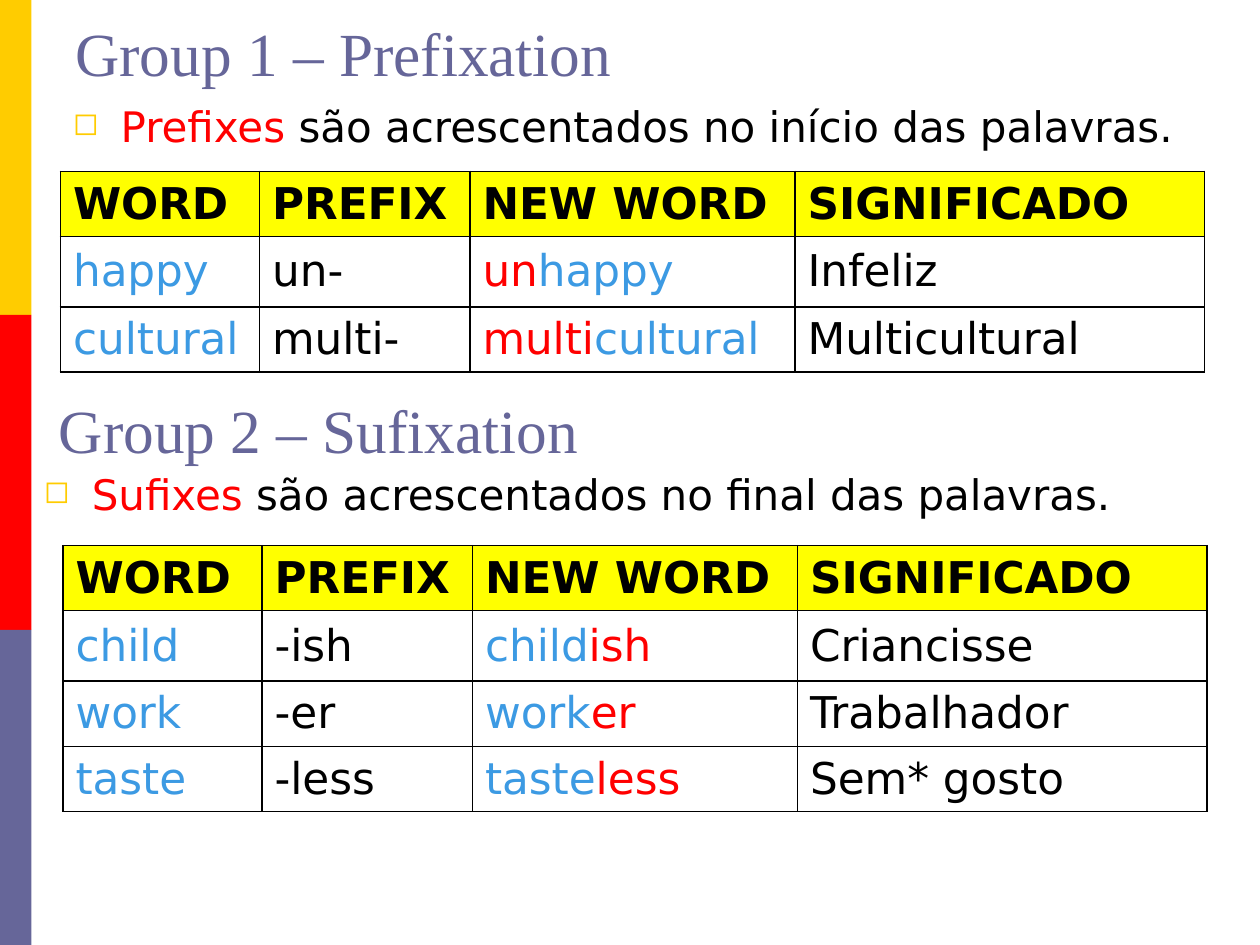
from lxml import etree
from pptx import Presentation
from pptx.dml.color import RGBColor
from pptx.enum.shapes import MSO_SHAPE
from pptx.enum.text import MSO_ANCHOR
from pptx.oxml import parse_xml
from pptx.oxml.ns import nsdecls
from pptx.util import Inches, Pt

RECTANGLE = MSO_SHAPE.RECTANGLE
TOP, MIDDLE, BOTTOM = MSO_ANCHOR.TOP, MSO_ANCHOR.MIDDLE, MSO_ANCHOR.BOTTOM

BLACK, WHITE, RED, YELLOW = "000000", "FFFFFF", "FF0000", "FFFF00"
GOLD, SLATE, BLUE = "FFCC00", "666699", "3C9AE3"

HEADING_FORMAT = {"name": "Times New Roman", "size": Pt(35)}
RULE_FORMAT = {"name": "DejaVu Sans", "size": Pt(24)}
CELL_FORMAT = {"name": "DejaVu Sans", "size": Pt(25), "bold": False}
HEADER_FORMAT = {**CELL_FORMAT, "bold": True}

SIDE_BANDS = [GOLD, RED, SLATE]
HEADERS = ["WORD", "PREFIX", "NEW WORD", "SIGNIFICADO"]
COLUMN_WIDTHS = [1.58, 1.67, 2.58, 3.25]
ROW_HEIGHT, FIRST_WORD_HEIGHT = 0.51, 0.56

# Boxes are left, top, width, height in inches; words are stem, affix, meaning.
GROUPS = [
    {
        "heading": "Group 1 – Prefixation",
        "heading_box": (0.5, 0, 9, 0.75),
        "rule": [("Prefixes ", RED), ("são acrescentados no início das palavras.", BLACK)],
        "rule_box": (0.48, 0.75, 9.33, 0.67),
        "table_corner": (0.48, 1.36),
        "words": [("happy", "un-", "Infeliz"), ("cultural", "multi-", "Multicultural")],
    },
    {
        "heading": "Group 2 – Sufixation",
        "heading_box": (0.37, 3.08, 9, 0.67),
        "rule": [("Sufixes ", RED), ("são acrescentados no final das palavras.", BLACK)],
        "rule_box": (0.25, 3.67, 8.92, 0.75),
        "table_corner": (0.5, 4.33),
        "words": [
            ("child", "-ish", "Criancisse"),
            ("work", "-er", "Trabalhador"),
            ("taste", "-less", "Sem* gosto"),
        ],
    },
]


def color(hex_string):
    return RGBColor.from_string(hex_string)


def write_runs(paragraph, runs, font_format):
    for text, run_color in runs:
        run = paragraph.add_run()
        run.text = text
        run.font.color.rgb = color(run_color)
        for attribute, value in font_format.items():
            setattr(run.font, attribute, value)


def add_text(slide, box, runs, font_format, anchor):
    frame = slide.shapes.add_textbox(*map(Inches, box)).text_frame
    frame.word_wrap = True
    frame.vertical_anchor = anchor
    paragraph = frame.paragraphs[0]
    write_runs(paragraph, runs, font_format)
    return paragraph


def add_bullet(paragraph):
    properties = paragraph._p.get_or_add_pPr()
    properties.set("marL", str(Inches(0.38)))
    properties.set("indent", str(-Inches(0.38)))
    for xml in (
        f'<a:spcBef {nsdecls("a")}><a:spcPct val="20000"/></a:spcBef>',
        f'<a:buClr {nsdecls("a")}><a:srgbClr val="{GOLD}"/></a:buClr>',
        f'<a:buSzPct {nsdecls("a")} val="75000"/>',
        f'<a:buChar {nsdecls("a")} char="◻"/>',
    ):
        properties.append(etree.fromstring(xml))


def add_borders(cell):
    properties = cell._tc.get_or_add_tcPr()
    for position, side in enumerate("LRTB"):
        properties.insert(position, parse_xml(
            f'<a:ln{side} {nsdecls("a")} w="{Pt(1)}"><a:solidFill>'
            f'<a:srgbClr val="{BLACK}"/></a:solidFill></a:ln{side}>'))


def word_row(stem, affix, meaning):
    """Runs of each cell, with the affix joined on the side its hyphen points to."""
    new_word = [(stem, BLUE), (affix.strip("-"), RED)]
    if affix.endswith("-"):
        new_word.reverse()
    return [[(stem, BLUE)], [(affix, BLACK)], new_word, [(meaning, BLACK)]]


def add_word_table(slide, corner, words):
    rows = [[[(header, BLACK)] for header in HEADERS]]
    rows += [word_row(*word) for word in words]
    heights = [ROW_HEIGHT, FIRST_WORD_HEIGHT] + [ROW_HEIGHT] * (len(words) - 1)
    size = sum(COLUMN_WIDTHS), sum(heights)
    table = slide.shapes.add_table(
        len(rows), len(HEADERS), *map(Inches, corner + size)).table
    for column, width in zip(table.columns, COLUMN_WIDTHS):
        column.width = Inches(width)
    for row, height in zip(table.rows, heights):
        row.height = Inches(height)
    for r, row in enumerate(rows):
        for c, runs in enumerate(row):
            cell = table.cell(r, c)
            cell.vertical_anchor = MIDDLE
            cell.fill.solid()
            cell.fill.fore_color.rgb = color(WHITE if r else YELLOW)
            add_borders(cell)
            write_runs(cell.text_frame.paragraphs[0], runs,
                       CELL_FORMAT if r else HEADER_FORMAT)


def main():
    presentation = Presentation()
    presentation.slide_width, presentation.slide_height = Inches(10), Inches(7.5)
    slide = presentation.slides.add_slide(presentation.slide_layouts[6])

    band_height = 7.5 / len(SIDE_BANDS)
    for i, band_color in enumerate(SIDE_BANDS):
        band = slide.shapes.add_shape(
            RECTANGLE, 0, Inches(i * band_height), Inches(0.25), Inches(band_height))
        band.shadow.inherit = False
        band.fill.solid()
        band.fill.fore_color.rgb = color(band_color)
        band.line.fill.background()

    for group in GROUPS:
        add_text(slide, group["heading_box"], [(group["heading"], SLATE)],
                 HEADING_FORMAT, BOTTOM)
        add_bullet(add_text(slide, group["rule_box"], group["rule"], RULE_FORMAT, TOP))
        add_word_table(slide, group["table_corner"], group["words"])

    presentation.save("out.pptx")


if __name__ == "__main__":
    main()
